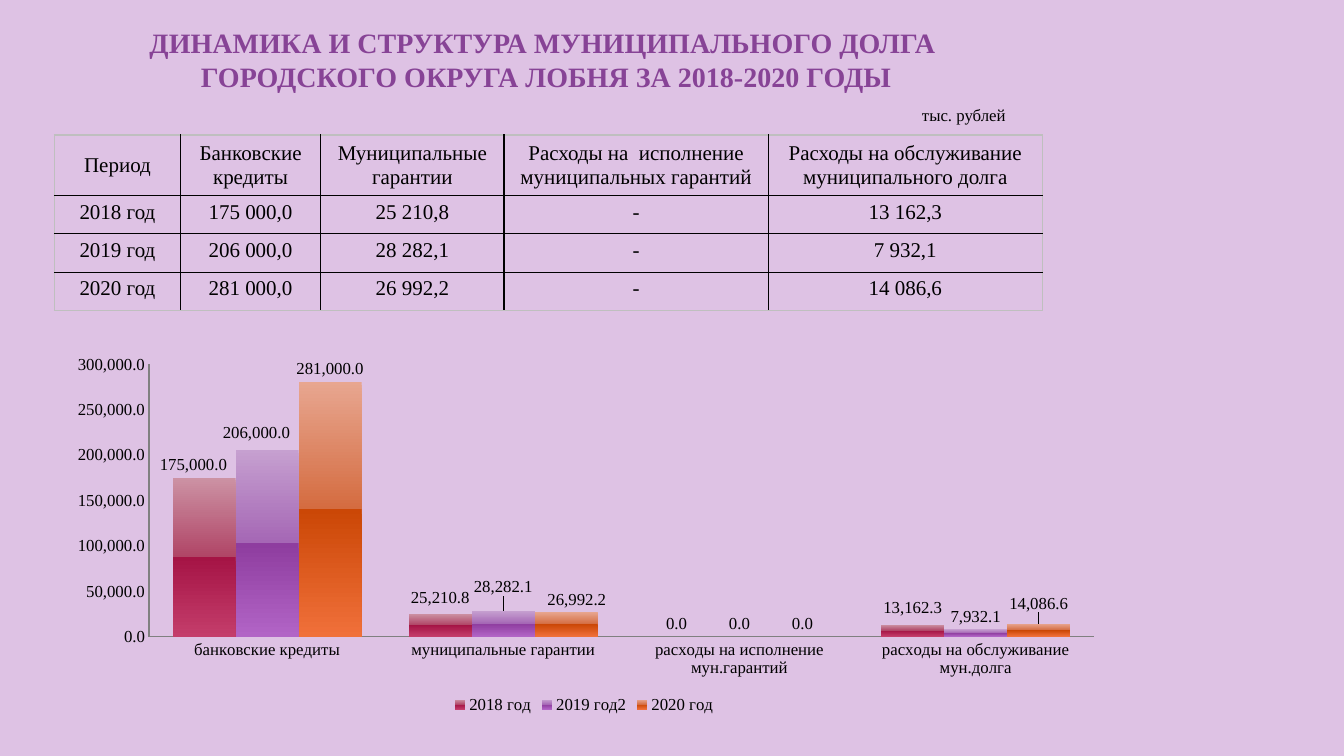
import pptx
import pptx.util
import pptx.dml.color
import pptx.chart.data
import pptx.enum.chart
import pptx.enum.text
import pptx.oxml
import pptx.oxml.ns
from lxml import etree

Inches, Pt, qn = pptx.util.Inches, pptx.util.Pt, pptx.oxml.ns.qn
MID = pptx.enum.text.MSO_ANCHOR.MIDDLE
FACE = "Times New Roman"


def color(code):
    return pptx.dml.color.RGBColor.from_string(code)


def write(frame, lines, size, code="000000", bold=False):
    para = frame.paragraphs[0]
    para.alignment = pptx.enum.text.PP_ALIGN.CENTER
    for i, line in enumerate(lines):
        if i:
            para.add_line_break()
        run = para.add_run()
        run.text = line
        run.font.name, run.font.size, run.font.bold = FACE, Pt(size), bold
        run.font.color.rgb = color(code)


deck = pptx.Presentation()
deck.slide_width, deck.slide_height = Inches(13.33), Inches(7.5)
slide = deck.slides.add_slide(deck.slide_layouts[6])
slide.background.fill.solid()
slide.background.fill.fore_color.rgb = color("DEC2E4")

# Title
box = slide.shapes.add_textbox(Inches(0.5), Inches(0.22), Inches(9.83), Inches(0.7))
frame = box.text_frame
frame.word_wrap = True
frame.vertical_anchor = pptx.enum.text.MSO_ANCHOR.BOTTOM
frame.margin_left = frame.margin_right = Inches(0.05)
frame.margin_top = frame.margin_bottom = 0
write(frame, ["ДИНАМИКА И СТРУКТУРА МУНИЦИПАЛЬНОГО ДОЛГА ",
              "ГОРОДСКОГО ОКРУГА ЛОБНЯ ЗА 2018-2020 ГОДЫ"], 20, "874396", True)

# Debt table
rows = [
    ["Период", "Банковские кредиты", "Муниципальные гарантии",
     "Расходы на  исполнение муниципальных гарантий",
     "Расходы на обслуживание муниципального долга"],
    ["2018 год", "175 000,0", "25 210,8", "-", "13 162,3"],
    ["2019 год", "206 000,0", "28 282,1", "-", "7 932,1"],
    ["2020 год", "281 000,0", "26 992,2", "-", "14 086,6"],
]
wide = [1.25, 1.39, 1.82, 2.62, 2.72]
table = slide.shapes.add_table(len(rows), len(wide), Inches(0.54), Inches(1.34),
                               Inches(9.8), Inches(1.74)).table
table.first_row = table.horz_banding = False
for col, width in zip(table.columns, wide):
    col.width = Inches(width)
for r, row in enumerate(rows):
    table.rows[r].height = Inches(0.38 if r else 0.6)
    for c, text in enumerate(row):
        cell = table.cell(r, c)
        cell.margin_left = cell.margin_right = Inches(0.13)
        cell.margin_top = cell.margin_bottom = Inches(0.05)
        if r == 0:
            cell.vertical_anchor = MID
        write(cell.text_frame, [text], 15)
        # Grey outer frame, black inner lines
        outer = {"L": c == 0, "R": c == len(wide) - 1,
                 "T": r == 0, "B": r == len(rows) - 1}
        props = cell._tc.get_or_add_tcPr()
        for side, edge in outer.items():
            line = etree.SubElement(props, qn("a:ln" + side), w=str(Pt(1)))
            fill = etree.SubElement(line, qn("a:solidFill"))
            etree.SubElement(fill, qn("a:srgbClr"), val="BFBFBF" if edge else "000000")
        cell.fill.background()

# Debt chart
kinds = pptx.enum.chart
data = pptx.chart.data.CategoryChartData(number_format="#,##0.0")
data.categories = ["банковские кредиты", "муниципальные гарантии",
                   "расходы на исполнение мун.гарантий",
                   "расходы на обслуживание мун.долга"]
data.add_series("2018 год", [175000, 25210.8, 0, 13162.3])
data.add_series("2019 год2", [206000, 28282.1, 0, 7932.1])
data.add_series("2020 год", [281000, 26992.2, 0, 14086.6])
chart = slide.shapes.add_chart(kinds.XL_CHART_TYPE.COLUMN_CLUSTERED, Inches(0.53),
                               Inches(3.47), Inches(10.53), Inches(3.65), data).chart
chart.font.name, chart.font.size = FACE, Pt(12)
chart.font.color.rgb = color("000000")
chart.has_title = False
chart.has_legend = True
chart.legend.position = kinds.XL_LEGEND_POSITION.BOTTOM
chart.legend.include_in_layout = False


def layout(**parts):
    node = etree.Element(qn("c:layout"))
    manual = etree.SubElement(node, qn("c:manualLayout"))
    for name, val in parts.items():
        etree.SubElement(manual, qn("c:" + name), val=str(val))
    return node


# Axes and plot area
for axis in (chart.category_axis, chart.value_axis):
    axis.has_major_gridlines = False
    axis.major_tick_mark = axis.minor_tick_mark = kinds.XL_TICK_MARK.NONE
    axis.format.line.color.rgb = color("808080")
    axis.format.line.width = Pt(1)
chart.value_axis.minimum_scale, chart.value_axis.maximum_scale = 0, 300000
chart.value_axis.major_unit = 50000
chart.value_axis.tick_labels.number_format = "#,##0.0"
chart.value_axis.tick_labels.number_format_is_linked = False
area = chart._chartSpace.chart.plotArea
for old in area.findall(qn("c:layout")):
    area.remove(old)
area.insert(0, layout(layoutTarget="inner", xMode="edge", yMode="edge",
                      x=0.09, y=0.04, w=0.89, h=0.74))

# Bars: light upper half, dark lower half
plot = chart.plots[0]
plot.gap_width, plot.overlap = 75, 0
plot.vary_by_categories = False
stops = [["CC92A4", "B04566", "A51445", "C43D6B"],
         ["C6A0D0", "A567B5", "8E3D9F", "B264C6"],
         ["E8A690", "D46C40", "CB4706", "F0703A"]]
# Label shifts by category, as shares of the chart
shifts = [{0: (-0.01, 0), 1: (0, -0.01), 3: (0, -0.01)},
          {0: (-0.01, -0.01), 1: (0, -0.03)},
          {1: (0.01, 0), 3: (0, -0.02)}]
for ser, tones, moves in zip(plot.series, stops, shifts):
    ser.format.fill.gradient()
    ser.format.fill.gradient_angle = 270
    grad = ser._element.find(".//" + qn("a:gsLst"))
    for old in list(grad):
        grad.remove(old)
    for pos, tone in zip((0, 50, 50, 100), tones):
        stop = etree.SubElement(grad, qn("a:gs"), pos=str(pos * 1000))
        etree.SubElement(stop, qn("a:srgbClr"), val=tone)
    labels = ser.data_labels
    labels.show_value = True
    labels.number_format, labels.number_format_is_linked = "#,##0.0", False
    labels.position = kinds.XL_LABEL_POSITION.OUTSIDE_END
    for idx, (dx, dy) in moves.items():
        ser.points[idx].data_label.position = kinds.XL_LABEL_POSITION.OUTSIDE_END
        for mark in ser._element.iter(qn("c:dLbl")):
            if mark.find(qn("c:idx")).get("val") == str(idx):
                mark.insert(1, layout(x=dx, y=dy))

# Unit note
note = slide.shapes.add_textbox(Inches(8.78), Inches(1.03), Inches(1.56), Inches(0.21))
note.text_frame.word_wrap = True
note.text_frame.vertical_anchor = MID
write(note.text_frame, ["тыс. рублей"], 12)

deck.save("out.pptx")
